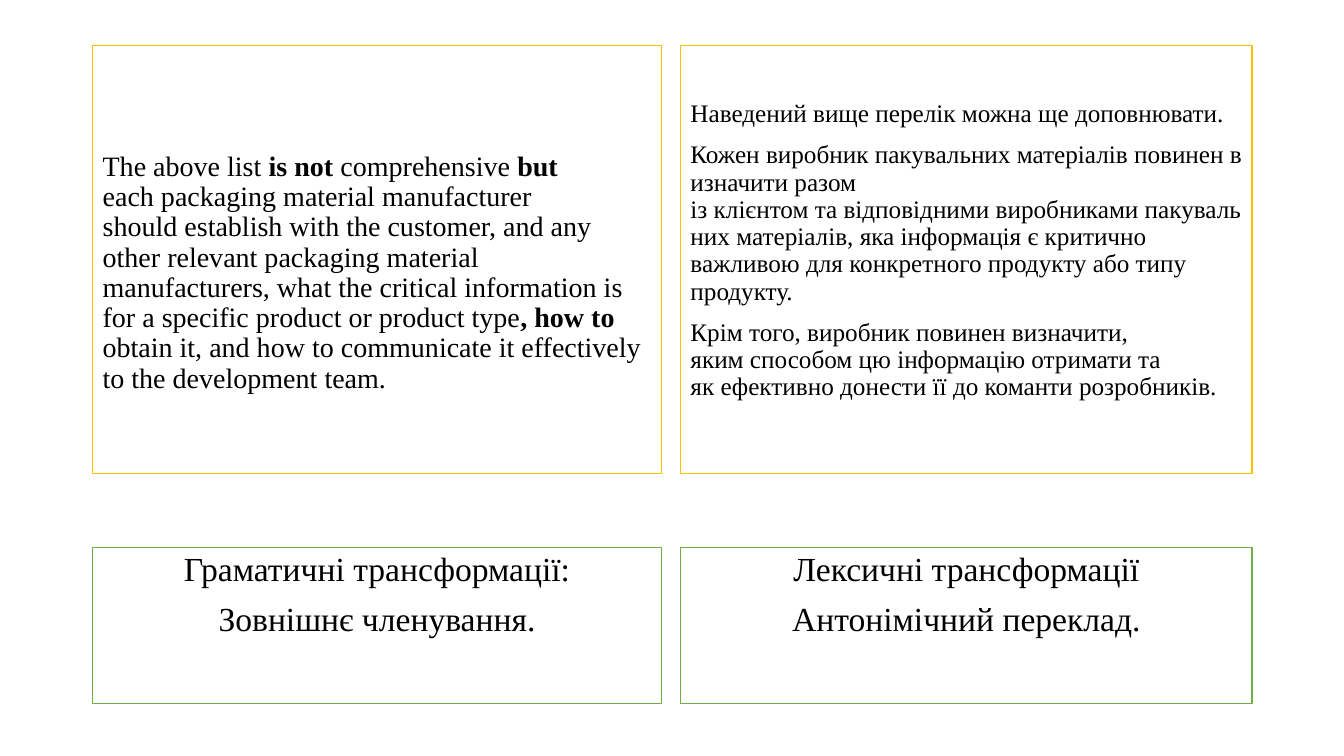
from dataclasses import dataclass

from pptx import Presentation
from pptx.dml.color import RGBColor
from pptx.enum.shapes import MSO_SHAPE
from pptx.enum.text import MSO_ANCHOR, PP_ALIGN
from pptx.util import Inches, Pt


@dataclass(frozen=True)
class Theme:
    font: str = "Times New Roman"
    ink: RGBColor = RGBColor(0x00, 0x00, 0x00)
    paper: RGBColor = RGBColor(0xFF, 0xFF, 0xFF)
    passage_line: RGBColor = RGBColor(0xFF, 0xC0, 0x00)
    label_line: RGBColor = RGBColor(0x70, 0xAD, 0x47)
    english_size: int = 20
    ukrainian_size: int = 18
    label_size: int = 24


THEME = Theme()
NO_BREAK_SPACE = chr(160)

# Each paragraph is a list of spans; every second span is bold.
# An underscore stands for a no-break space.
ENGLISH = [[
    "The above list ",
    "is not ",
    "comprehensive ",
    "but",
    " each_packaging material manufacturer should_establish with the customer, "
    "and any other_relevant packaging material manufacturers, "
    "what_the critical information is for a specific product_or product type",
    ", how to ",
    "obtain it, and how to_communicate it effectively to the development_team.",
]]
UKRAINIAN = [
    ["Наведений_вище_перелік_можна ще доповнювати."],
    ["Кожен_виробник_пакувальних_матеріалів_повинен_визначити разом "
     "із_клієнтом_та_відповідними_виробниками_пакувальних_матеріалів, "
     "яка_інформація_є критично важливою_для конкретного_продукту_або_типу "
     "продукту."],
    ["Крім_того,_виробник_повинен_визначити, "
     "яким_способом_цю_інформацію_отримати_та "
     "як_ефективно_донести_її_до_команти_розробників."],
]
GRAMMAR = [["Граматичні трансформації:"], ["Зовнішнє членування."]]
LEXIS = [["Лексичні трансформації"], ["Антонімічний переклад."]]


def add_frame(slide, left, top, width, height, line_color):
    frame = slide.shapes.add_shape(
        MSO_SHAPE.RECTANGLE, Inches(left), Inches(top), Inches(width), Inches(height))
    frame.shadow.inherit = False
    frame.fill.solid()
    frame.fill.fore_color.rgb = THEME.paper
    frame.line.color.rgb = line_color
    frame.line.width = Pt(1)
    frame.text_frame.word_wrap = True
    return frame.text_frame


def write_paragraphs(text_frame, paragraphs, size, alignment):
    for index, spans in enumerate(paragraphs):
        para = text_frame.add_paragraph() if index else text_frame.paragraphs[0]
        para.alignment = alignment
        para.line_spacing = 0.9
        para.space_before = Pt(10 if index else 0)
        for position, text in enumerate(spans):
            span = para.add_run()
            span.text = text.replace("_", NO_BREAK_SPACE)
            span.font.name = THEME.font
            span.font.size = Pt(size)
            span.font.color.rgb = THEME.ink
            span.font.bold = position % 2 == 1


def add_passage(slide, left, width, paragraphs, size, bottom_margin):
    """Yellow frame whose text stands above a deep bottom margin."""
    text_frame = add_frame(slide, left, 0.45, width, 4.25, THEME.passage_line)
    text_frame.vertical_anchor = MSO_ANCHOR.BOTTOM
    text_frame.margin_bottom = Inches(bottom_margin)
    write_paragraphs(text_frame, paragraphs, size, PP_ALIGN.LEFT)


def add_label(slide, left, width, paragraphs):
    """Green frame naming the transformation used in the passage above."""
    text_frame = add_frame(slide, left, 5.43, width, 1.55, THEME.label_line)
    text_frame.vertical_anchor = MSO_ANCHOR.TOP
    write_paragraphs(text_frame, paragraphs, THEME.label_size, PP_ALIGN.CENTER)


def add_column(slide, left, width, passage, size, bottom_margin, label):
    add_passage(slide, left, width, passage, size, bottom_margin)
    add_label(slide, left, width, label)


def main():
    deck = Presentation()
    deck.slide_width = Inches(13.33)
    deck.slide_height = Inches(7.5)
    slide = deck.slides.add_slide(deck.slide_layouts[6])
    add_column(slide, 0.92, 5.64, ENGLISH, THEME.english_size, 0.79, GRAMMAR)
    add_column(slide, 6.75, 5.67, UKRAINIAN, THEME.ukrainian_size, 0.72, LEXIS)
    deck.save("out.pptx")


if __name__ == "__main__":
    main()
